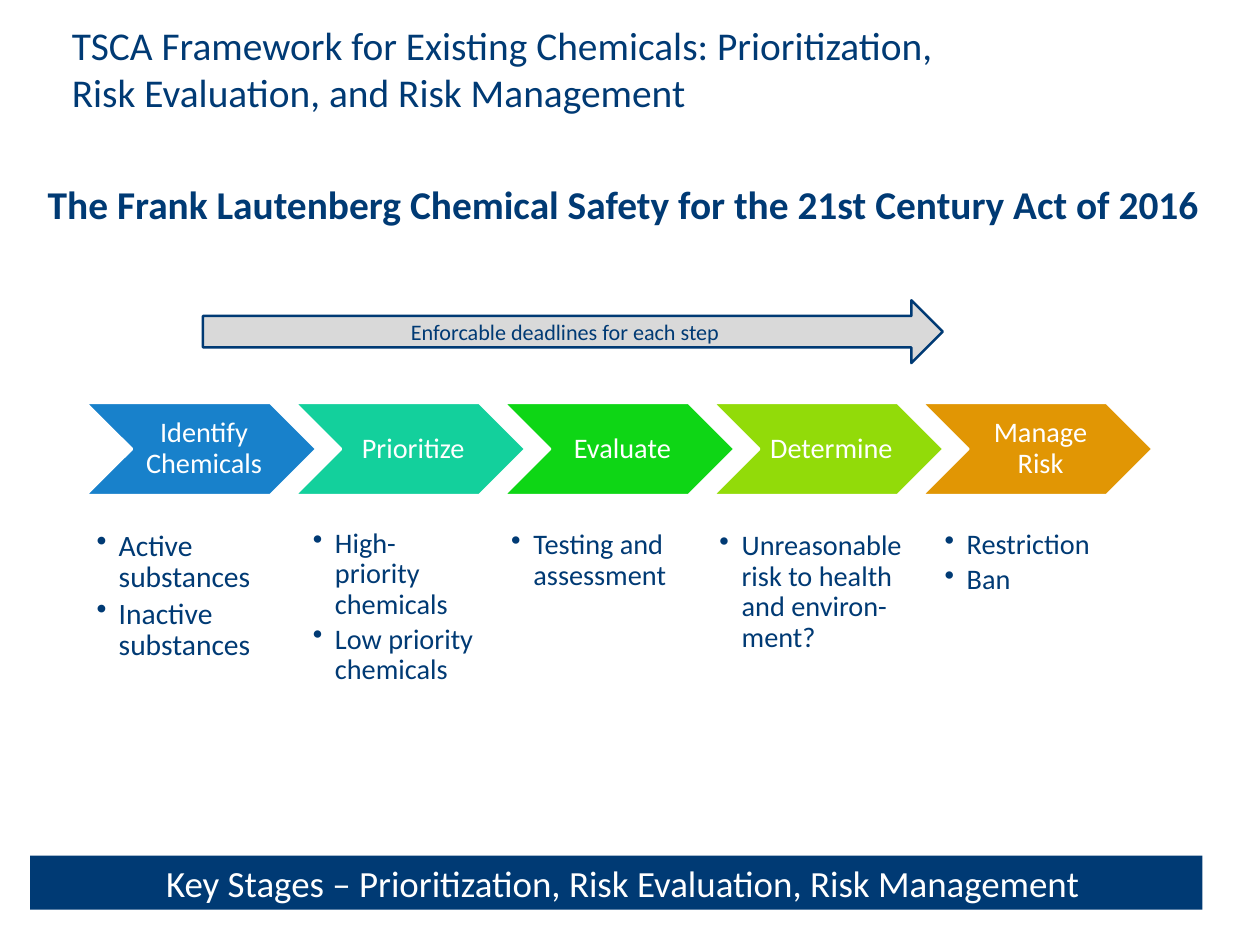
from pptx import Presentation
from pptx.dml.color import RGBColor as RGB
from pptx.enum.shapes import MSO_SHAPE as Shape
from pptx.enum.text import MSO_ANCHOR as Anchor, MSO_AUTO_SIZE as Fit, PP_ALIGN as Align
from pptx.oxml.ns import qn
from pptx.util import Inches, Pt
from lxml import etree

COLORS = {
    "navy": "003A74", "white": "FFFFFF", "gray": "D9D9D9",
    "blue": "1881CB", "teal": "13D09C", "green": "0ED615",
    "lime": "92DB09", "amber": "E19604",
}


def write(para, text, size, color, align=Align.LEFT):
    """Fill a paragraph with text and give it its font."""
    para.text = text
    para.alignment = align
    font = para.font
    font.name, font.size = "Calibri", Pt(size)
    font.color.rgb = RGB.from_string(COLORS[color])


def draw(kind, box, fill, line=None):
    """Add a flat preset shape with middle-anchored text."""
    shape = slide.shapes.add_shape(kind, *map(Inches, box))
    shape.shadow.inherit = False
    shape.fill.solid()
    shape.fill.fore_color.rgb = RGB.from_string(COLORS[fill])
    if line:
        shape.line.color.rgb = RGB.from_string(COLORS[line])
        shape.line.width = Pt(2)
    else:
        shape.line.fill.background()
    shape.text_frame.word_wrap = True
    shape.text_frame.vertical_anchor = Anchor.MIDDLE
    return shape


deck = Presentation()
deck.slide_width, deck.slide_height = Inches(14.22), Inches(10.67)
slide = deck.slides.add_slide(deck.slide_layouts[5])

# Title and headline
title = slide.shapes.title
title.left, title.top = Inches(0.71), Inches(0.19)
title.width, title.height = Inches(10.6), Inches(1.28)
frame = title.text_frame
frame.auto_size = Fit.NONE
frame.vertical_anchor = Anchor.TOP
write(frame.paragraphs[0], "TSCA Framework for Existing Chemicals: Prioritization, "
      "Risk Evaluation, and Risk Management", 32, "navy")

head = slide.shapes.add_textbox(Inches(0.44), Inches(1.98), Inches(13.4), Inches(0.64))
head.text_frame.word_wrap = True
para = head.text_frame.paragraphs[0]
write(para, "The Frank Lautenberg Chemical Safety for the 21st Century Act of 2016",
      32, "navy")
para.font.bold = True

# Deadline arrow
arrow = draw(Shape.RIGHT_ARROW, (2.29, 3.39, 8.35, 0.71), "gray", "navy")
write(arrow.text_frame.paragraphs[0], "Enforcable deadlines for each step",
      18, "navy", Align.CENTER)

# Steps: label, fill, list (left, top, width), text size, points
STEPS = [
    ("Identify Chemicals", "blue", (1.09, 5.99, 1.96), 24,
     ["Active substances", "Inactive substances"]),
    ("Prioritize", "teal", (3.53, 5.97, 1.88), 23,
     ["High-priority chemicals", "Low priority chemicals"]),
    ("Evaluate", "green", (5.77, 5.99, 1.96), 23, ["Testing and assessment"]),
    ("Determine", "lime", (8.12, 6, 2.08), 23,
     ["Unreasonable risk to health and environ-ment?"]),
    ("Manage Risk", "amber", (10.66, 5.99, 1.84), 23, ["Restriction", "Ban"]),
]
PITCH = 2.36

for i, (label, fill, (left, top, width), size, points) in enumerate(STEPS):
    step = draw(Shape.CHEVRON, (0.97 + i * PITCH, 4.55, 2.6, 1.04), fill, "white")
    frame = step.text_frame
    frame.margin_left = Inches(0.1)
    frame.margin_right = frame.margin_top = frame.margin_bottom = Inches(0.03)
    para = frame.paragraphs[0]
    write(para, label, 23, "white", Align.CENTER)
    para.line_spacing = 0.9

    box = slide.shapes.add_textbox(Inches(left), Inches(top), Inches(width), Inches(1.81))
    frame = box.text_frame
    frame.word_wrap = True
    frame.margin_left = frame.margin_right = frame.margin_top = frame.margin_bottom = 0
    for j, point in enumerate(points):
        para = frame.add_paragraph() if j else frame.paragraphs[0]
        para.line_spacing, para.space_after = 0.9, Pt(3.5)
        props = para._p.get_or_add_pPr()
        props.set("marL", str(Inches(0.25)))
        props.set("indent", str(-Inches(0.25)))
        etree.SubElement(props, qn("a:buChar"), char="•")
        write(para, point, size, "navy")

# Key stages bar
bar = draw(Shape.RECTANGLE, (0.34, 9.66, 13.23, 0.61), "navy")
bar.text_frame.margin_left = Inches(0.25)
write(bar.text_frame.paragraphs[0],
      "Key Stages – Prioritization, Risk Evaluation, Risk Management",
      30, "white", Align.CENTER)

deck.save("out.pptx")
